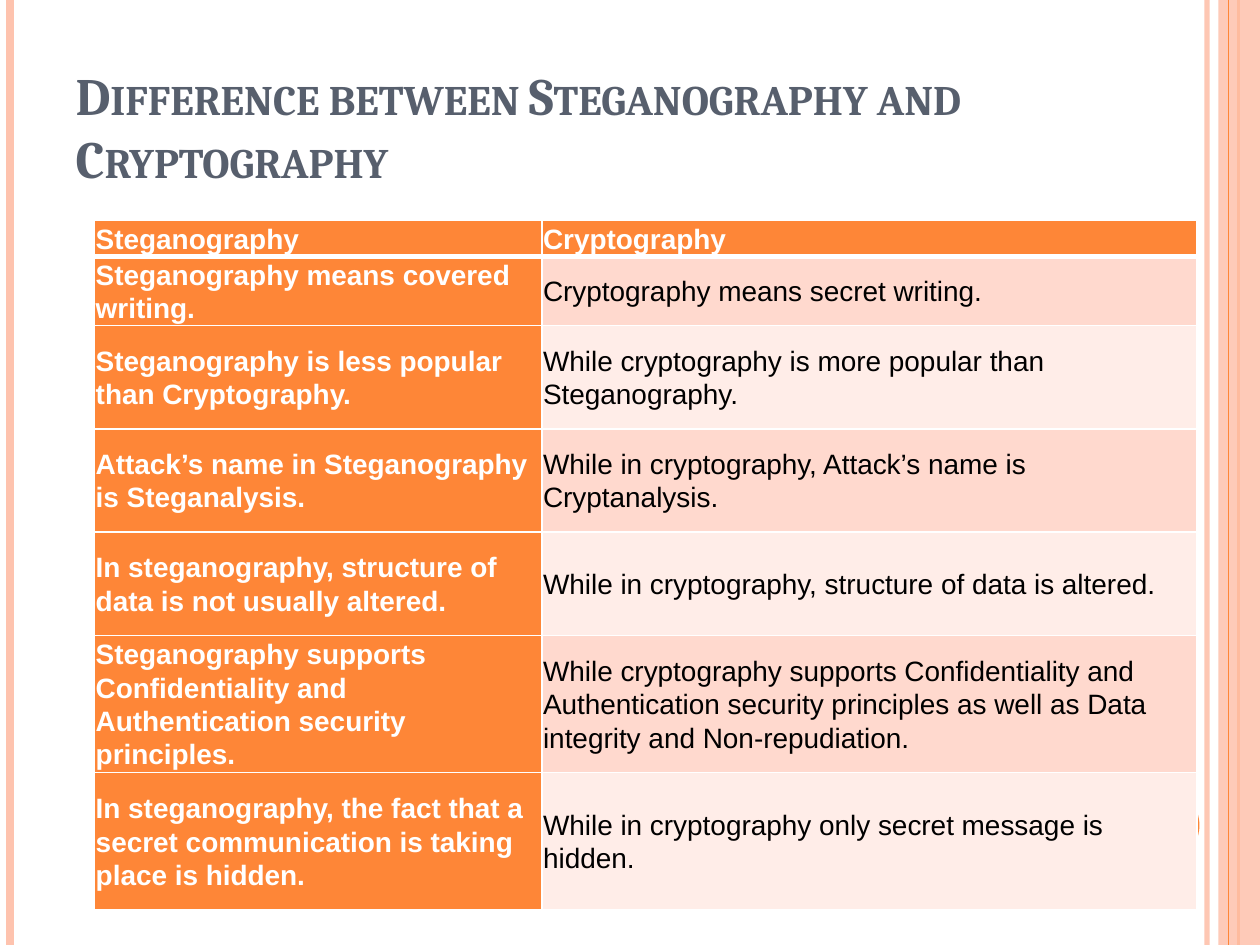
from lxml import etree
from pptx import Presentation
from pptx.dml.color import RGBColor
from pptx.enum.shapes import MSO_CONNECTOR, MSO_SHAPE
from pptx.enum.text import MSO_ANCHOR, PP_ALIGN
from pptx.oxml.ns import qn
from pptx.util import Inches, Pt

LINE = MSO_CONNECTOR.STRAIGHT
RECT, OVAL = MSO_SHAPE.RECTANGLE, MSO_SHAPE.OVAL
MIDDLE, BOTTOM = MSO_ANCHOR.MIDDLE, MSO_ANCHOR.BOTTOM
LEFT = PP_ALIGN.LEFT

# Content
TITLE = "Difference between Steganography and Cryptography"
ROWS = [
    ("Steganography", "Cryptography"),
    ("Steganography means covered writing.",
     "Cryptography means secret writing."),
    ("Steganography is less popular than Cryptography.",
     "While cryptography is more popular than Steganography."),
    ("Attack’s name in Steganography is Steganalysis.",
     "While in cryptography, Attack’s name is Cryptanalysis."),
    ("In steganography, structure of data is not usually altered.",
     "While in cryptography, structure of data is altered."),
    ("Steganography supports Confidentiality and Authentication security "
     "principles.",
     "While cryptography supports Confidentiality and Authentication security "
     "principles as well as Data integrity and Non-repudiation."),
    ("In steganography, the fact that a secret communication is taking place "
     "is hidden.",
     "While in cryptography only secret message is hidden."),
]
WIDTHS = [3.55, 5.2]
HEIGHTS = [0.28, 0.55, 0.82, 0.82, 0.82, 1.09, 1.09]
ORANGE, PEACH, SLATE = "FE8637", "FEC3AE", "575F6D"
WHITE, BLACK = "FFFFFF", "000000"
BANDS = ["FFEDE8", "FFD9CE"]


def paint(target, color, alpha=None):
    """Give a fill (or a line's fill) a solid colour."""
    target.solid()
    target.fore_color.rgb = RGBColor.from_string(color)
    if alpha:
        clr = target._xPr.find(".//" + qn("a:srgbClr"))
        etree.SubElement(clr, qn("a:alpha")).set("val", str(alpha * 1000))


def add_text(frame, text, font, size, color, bold):
    para = frame.paragraphs[0]
    para.alignment = LEFT
    run = para.add_run()
    run.text = text
    run.font.name, run.font.size, run.font.bold = font, Pt(size), bold
    paint(run.font.fill, color)
    return para, run


def add_stripe(x, color, width, alpha=None):
    line = slide.shapes.add_connector(
        LINE, Inches(x), 0, Inches(x), Inches(7.5))
    line.line.width = Pt(width)
    paint(line.line.fill, color, alpha)
    etree.SubElement(line._element.spPr, qn("a:effectLst"))


def add_block(kind, x, y, w, h, color, alpha=None):
    block = slide.shapes.add_shape(
        kind, Inches(x), Inches(y), Inches(w), Inches(h))
    block.shadow.inherit = False
    block.line.fill.background()
    paint(block.fill, color, alpha)


def add_edges(cell, bottom):
    props = cell._tc.get_or_add_tcPr()
    for i, (side, width) in enumerate(
            [("L", 1), ("R", 1), ("T", 1), ("B", bottom)]):
        edge = etree.Element(qn("a:ln" + side), w=str(Pt(width)))
        solid = etree.SubElement(edge, qn("a:solidFill"))
        etree.SubElement(solid, qn("a:srgbClr"), val=WHITE)
        props.insert(i, edge)


prs = Presentation()
prs.slide_width, prs.slide_height = Inches(10), Inches(7.5)
slide = prs.slides.add_slide(prs.slide_layouts[5])

# Side stripes and disc
add_stripe(9.58, PEACH, 3, 93)
add_stripe(0.08, PEACH, 4.5)
add_stripe(9.83, ORANGE, 1.5)
add_block(RECT, 9.67, 0, 0.33, 7.5, PEACH, 87)
add_stripe(9.75, ORANGE, 0.75)
add_block(OVAL, 8.92, 6.25, 0.6, 0.6, ORANGE)

# Title
title = slide.shapes.title
title.left, title.top = Inches(0.5), Inches(0.3)
title.width, title.height = Inches(8.17), Inches(1.25)
title.text_frame.vertical_anchor = BOTTOM
title.text_frame.word_wrap = True
para, run = add_text(title.text_frame, TITLE, "Cambria", 30, SLATE, True)
run.font._element.set("cap", "small")

# Table
table = slide.shapes.add_table(
    len(ROWS), len(WIDTHS), Inches(0.75), Inches(1.75),
    Inches(sum(WIDTHS)), Inches(sum(HEIGHTS))).table
for col, width in zip(table.columns, WIDTHS):
    col.width = Inches(width)
for r, (row, height) in enumerate(zip(ROWS, HEIGHTS)):
    table.rows[r].height = Inches(height)
    for c, text in enumerate(row):
        cell = table.cell(r, c)
        head = r == 0 or c == 0
        cell.vertical_anchor = MIDDLE
        cell.margin_left = cell.margin_right = Inches(0.01)
        cell.margin_top = cell.margin_bottom = Inches(0.01)
        paint(cell.fill, ORANGE if head else BANDS[r % 2])
        add_edges(cell, 3 if r == 0 else 1)
        para, run = add_text(cell.text_frame, text, "Arial", 16,
                             WHITE if head else BLACK, head)
        para.line_spacing = 1.07

prs.save("out.pptx")
